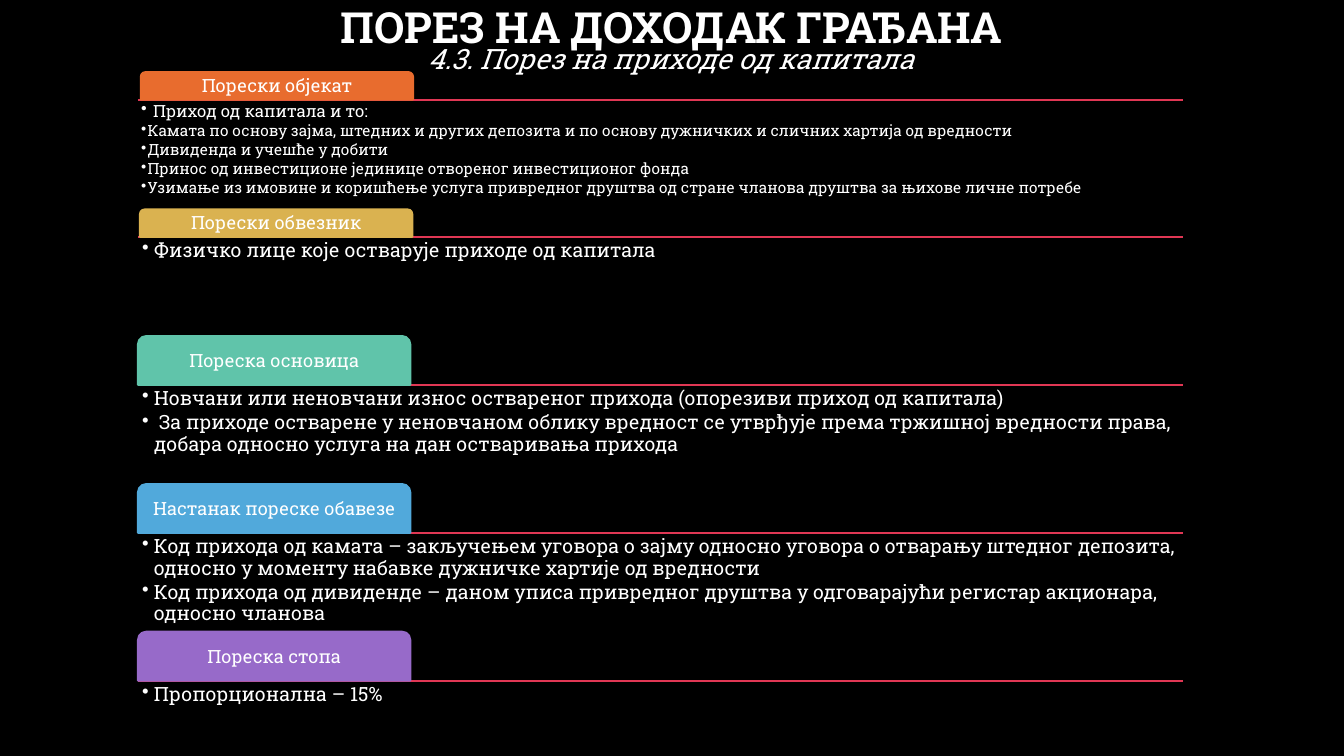
"""Builds a slide on the taxation of income from capital, in five labelled sections."""
from lxml.etree import SubElement
from pptx import Presentation
from pptx.dml.color import RGBColor
from pptx.enum.shapes import MSO_CONNECTOR, MSO_SHAPE
from pptx.enum.text import MSO_ANCHOR, MSO_AUTO_SIZE, PP_ALIGN
from pptx.oxml.ns import qn
from pptx.util import Cm, Pt

COLORS = {
    "background": "000000",
    "text": "FFFFFF",
    "rule": "E03754",
    "object": "E86C2E",
    "payer": "DAB250",
    "base": "60C4AA",
    "origin": "51A9DB",
    "rate": "976AC9",
}
FONT = "Roboto Slab"
LEFT, WIDTH = 3.48, 26.34
TAB_WIDTH = 6.86
BODY_HEIGHT = 2.44

SECTIONS = [
    ("Порески објекат", "object", 3.55, 0.69, 2.51, 0.08, [
        ("Приход од капитала и то:", 12, 0.3),
        ("Камата по основу зајма, штедних и других депозита и по основу "
         "дужничких и сличних хартија од вредности", 11, 0.16),
        ("Дивиденда и учешће у добити", 11, 0.16),
        ("Принос од инвестиционе јединице отвореног инвестиционог фонда", 11, 0.16),
        ("Узимање из имовине и коришћење услуга привредног друштва од стране "
         "чланова друштва за њихове личне потребе", 11, 0.16),
    ]),
    ("Порески обвезник", "payer", 3.53, 0.69, 5.97, 0.1, [
        ("Физичко лице које остварује приходе од капитала", 14, 0.3),
    ]),
    ("Пореска основица", "base", LEFT, 1.23, 9.7, 0.1, [
        ("Новчани или неновчани износ оствареног прихода "
         "(опорезиви приход од капитала)", 14, 0.3),
        (" За приходе остварене у неновчаном облику вредност се утврђује према "
         "тржишној вредности права, добара односно услуга на дан остваривања прихода",
         14, 0.3),
    ]),
    ("Настанак пореске обавезе", "origin", LEFT, 1.23, 13.43, 0.1, [
        ("Код прихода од камата – закључењем уговора о зајму односно уговора о "
         "отварању штедног депозита, односно у моменту набавке дужничке хартије "
         "од вредности", 14, 0.3),
        ("Код прихода од дивиденде – даном уписа привредног друштва у одговарајући "
         "регистар акционара, односно чланова", 14, 0.3),
    ]),
    ("Пореска стопа", "rate", LEFT, 1.23, 17.15, 0.1, [
        ("Пропорционална – 15%", 14, 0.3),
    ]),
]


def set_frame(shape, inset, anchor):
    frame = shape.text_frame
    frame.word_wrap = True
    frame.auto_size = MSO_AUTO_SIZE.NONE
    frame.vertical_anchor = anchor
    frame.margin_left = frame.margin_right = Cm(inset)
    frame.margin_top = frame.margin_bottom = Cm(inset)
    return frame


def write(paragraph, text, size, align, spacing=0.9, bold=False, italic=False):
    paragraph.alignment = align
    paragraph.line_spacing = spacing
    paragraph.space_before = Pt(0)
    run = paragraph.add_run()
    run.text = text
    run.font.name = FONT
    run.font.size = Pt(size)
    run.font.bold = bold
    run.font.italic = italic
    run.font.color.rgb = RGBColor.from_string(COLORS["text"])


presentation = Presentation()
presentation.slide_width = Cm(33.87)
presentation.slide_height = Cm(19.05)
slide = presentation.slides.add_slide(presentation.slide_layouts[5])
slide.background.fill.solid()
slide.background.fill.fore_color.rgb = RGBColor.from_string(COLORS["background"])

title = slide.shapes.title
title.left, title.top, title.width, title.height = Cm(2.54), Cm(0.43), Cm(28.75), Cm(0.61)
frame = set_frame(title, 0.13, MSO_ANCHOR.MIDDLE)
write(frame.paragraphs[0], "ПОРЕЗ НА ДОХОДАК ГРАЂАНА", 30.6, PP_ALIGN.CENTER, bold=True)

subtitle = slide.shapes.add_textbox(Cm(2.54), Cm(0.74), Cm(28.75), Cm(1.4))
frame = set_frame(subtitle, 0.13, MSO_ANCHOR.TOP)
write(frame.paragraphs[0], "4.3. Порез на приходе од капитала", 20, PP_ALIGN.CENTER,
      spacing=1.2, italic=True)

for label, color, tab_left, tab_height, rule_top, inset, items in SECTIONS:
    rule = slide.shapes.add_connector(
        MSO_CONNECTOR.STRAIGHT, Cm(LEFT), Cm(rule_top), Cm(LEFT + WIDTH), Cm(rule_top))
    rule.line.color.rgb = RGBColor.from_string(COLORS["rule"])
    rule.line.width = Pt(1.5)
    SubElement(rule._element.spPr, qn("a:effectLst"))

    tab = slide.shapes.add_shape(
        MSO_SHAPE.ROUND_2_SAME_RECTANGLE,
        Cm(tab_left), Cm(rule_top - tab_height), Cm(TAB_WIDTH), Cm(tab_height))
    tab.shadow.inherit = False
    tab.fill.solid()
    tab.fill.fore_color.rgb = RGBColor.from_string(COLORS[color])
    tab.line.color.rgb = RGBColor.from_string(COLORS[color])
    tab.line.width = Pt(1.5)
    frame = set_frame(tab, 0.08, MSO_ANCHOR.MIDDLE)
    write(frame.paragraphs[0], label, 13, PP_ALIGN.CENTER)

    body = slide.shapes.add_textbox(Cm(LEFT), Cm(rule_top), Cm(WIDTH), Cm(BODY_HEIGHT))
    frame = set_frame(body, inset, MSO_ANCHOR.TOP)
    for index, (text, size, indent) in enumerate(items):
        paragraph = frame.add_paragraph() if index else frame.paragraphs[0]
        write(paragraph, text, size, PP_ALIGN.LEFT)
        paragraph.space_after = Pt(round(size * 0.15, 2))
        properties = paragraph._p.get_or_add_pPr()
        properties.set("marL", str(Cm(indent)))
        properties.set("indent", str(-Cm(indent)))
        SubElement(properties, qn("a:buChar")).set("char", "•")

presentation.save("out.pptx")
